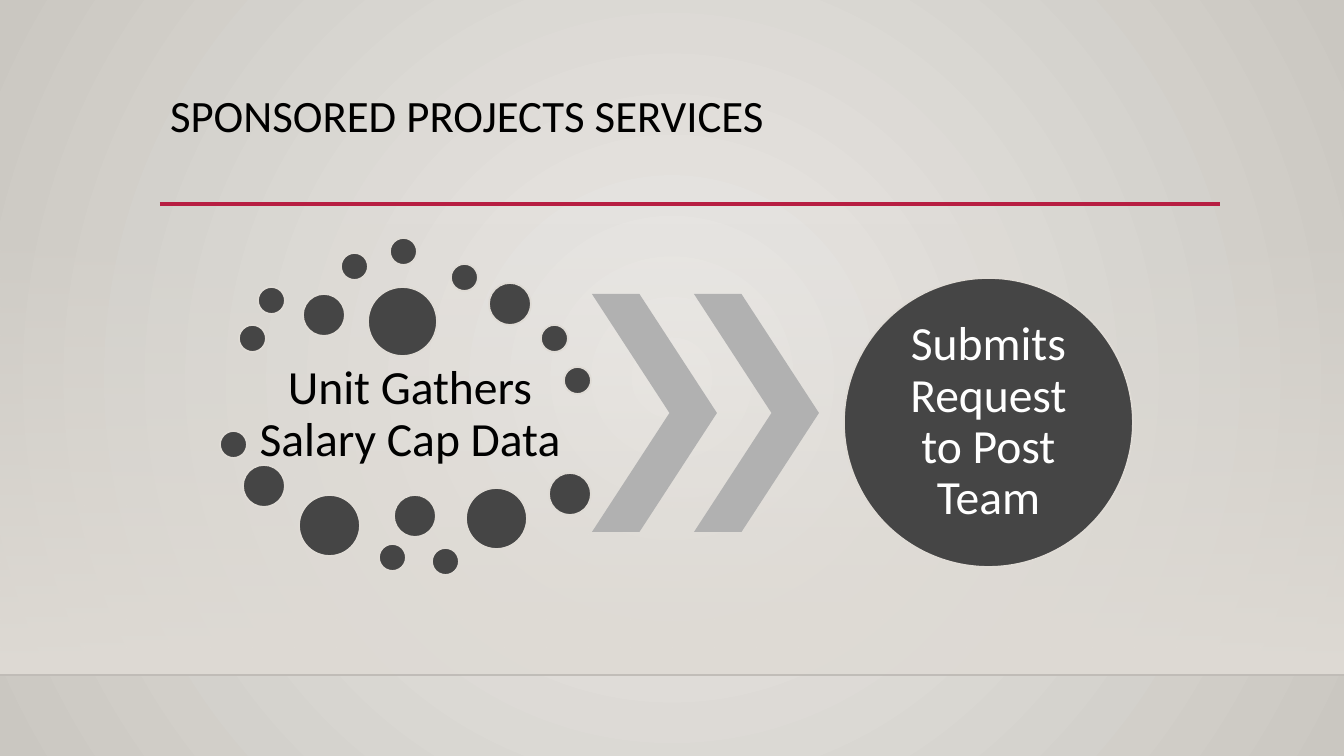
"""Build the Sponsored Projects Services slide."""
import pptx
import pptx.util
import pptx.dml.color
import pptx.enum.shapes
import pptx.enum.text
import pptx.oxml.ns
import lxml.etree

PX = 914400 / 100.8
COLORS = {
    "ink": "000000", "white": "FFFFFF", "dark": "454545", "arrow": "B1B1B1",
    "edge": "DFDBD5", "rule": "B71E42", "floor": "000001",
    "glow": "ECEAE7", "rim": "CAC7C1",
}
KIND = pptx.enum.shapes.MSO_SHAPE
ALIGN = pptx.enum.text.PP_ALIGN
ANCHOR = pptx.enum.text.MSO_ANCHOR
qn = pptx.oxml.ns.qn


def rgb(name):
    return pptx.dml.color.RGBColor.from_string(COLORS[name])


def write(shape, text, size, color, align, anchor, inset):
    frame = shape.text_frame
    frame.text = text
    frame.word_wrap = True
    frame.auto_size = pptx.enum.text.MSO_AUTO_SIZE.NONE
    frame.vertical_anchor = anchor
    frame.margin_left = frame.margin_right = round(inset * PX)
    frame.margin_top = frame.margin_bottom = round(inset / 2 * PX)
    para = frame.paragraphs[0]
    para.alignment = align
    para.line_spacing = 0.9
    font = para.runs[0].font
    font.name = "Calibri"
    font.size = pptx.util.Pt(size)
    font.color.rgb = rgb(color)


deck = pptx.Presentation()
deck.slide_width, deck.slide_height = round(1344 * PX), round(756 * PX)
slide = deck.slides.add_slide(deck.slide_layouts[5])
shapes = slide.shapes

back = slide.background.fill
back.gradient()
for stop, name in zip(back.gradient_stops, ("glow", "rim")):
    stop.color.rgb = rgb(name)
lin = slide.element.find(".//" + qn("a:lin"))
radial = lxml.etree.Element(qn("a:path"), {"path": "circle"})
sides = dict.fromkeys("ltrb", "50000")
lxml.etree.SubElement(radial, qn("a:fillToRect"), sides)
lin.getparent().replace(lin, radial)

box = [round(n * PX) for n in (0, 223, 1344, 453)]
panel = shapes.add_shape(KIND.RECTANGLE, *box)
panel.shadow.inherit = False
panel.line.fill.background()
panel.fill.gradient()
panel.fill.gradient_angle = 270
for stop in panel.fill.gradient_stops:
    stop.color.rgb = rgb("edge")
tint = panel.element.find(".//" + qn("a:srgbClr"))
lxml.etree.SubElement(tint, qn("a:alpha"), val="0")

for left, right, y, name, width, alpha in (
    (0, 1344, 675, "floor", 1, 20),
    (160, 1220, 204, "rule", 2.5, 100),
):
    ends = [round(n * PX) for n in (left, y, right, y)]
    line = shapes.add_connector(pptx.enum.shapes.MSO_CONNECTOR.STRAIGHT, *ends)
    line.line.color.rgb = rgb(name)
    line.line.width = pptx.util.Pt(width)
    tint = line.element.find(".//" + qn("a:srgbClr"))
    lxml.etree.SubElement(tint, qn("a:alpha"), val=str(alpha * 1000))
    lxml.etree.SubElement(line.element.spPr, qn("a:effectLst"))

title = shapes.title
title.left, title.top, title.width, title.height = [
    round(n * PX) for n in (160, 89, 1058, 116)]
write(title, "SPONSORED PROJECTS SERVICES", 32, "ink",
      ALIGN.LEFT, ANCHOR.TOP, 10)

box = [round(n * PX) for n in (240, 359, 340, 112)]
label = shapes.add_textbox(*box)
write(label, "Unit Gathers Salary Cap Data", 34, "ink",
      ALIGN.CENTER, ANCHOR.MIDDLE, 5)

DOTS = {
    27: [(239, 325), (258, 287), (341, 253), (390, 238), (451, 264),
         (541, 325), (564, 367), (220, 431), (379, 544), (432, 548)],
    42: [(303, 294), (489, 283), (243, 465), (394, 495), (549, 473)],
    61: [(299, 495), (466, 488)],
    69: [(368, 287)],
    289: [(844, 278)],
}
for size, spots in DOTS.items():
    for x, y in spots:
        box = [round(n * PX) for n in (x, y, size, size)]
        dot = shapes.add_shape(KIND.OVAL, *box)
        dot.shadow.inherit = False
        dot.fill.solid()
        dot.fill.fore_color.rgb = rgb("dark")
        dot.line.color.rgb = rgb("edge")
        dot.line.width = pptx.util.Pt(1.25)
write(dot, "Submits Request to Post Team", 34, "white",
      ALIGN.CENTER, ANCHOR.MIDDLE, 0)

for x in (592, 694):
    box = [round(n * PX) for n in (x, 294, 125, 238)]
    arrow = shapes.add_shape(KIND.CHEVRON, *box)
    arrow.shadow.inherit = False
    arrow.adjustments[0] = 0.62
    arrow.fill.solid()
    arrow.fill.fore_color.rgb = rgb("arrow")
    arrow.line.fill.background()

deck.save("out.pptx")
